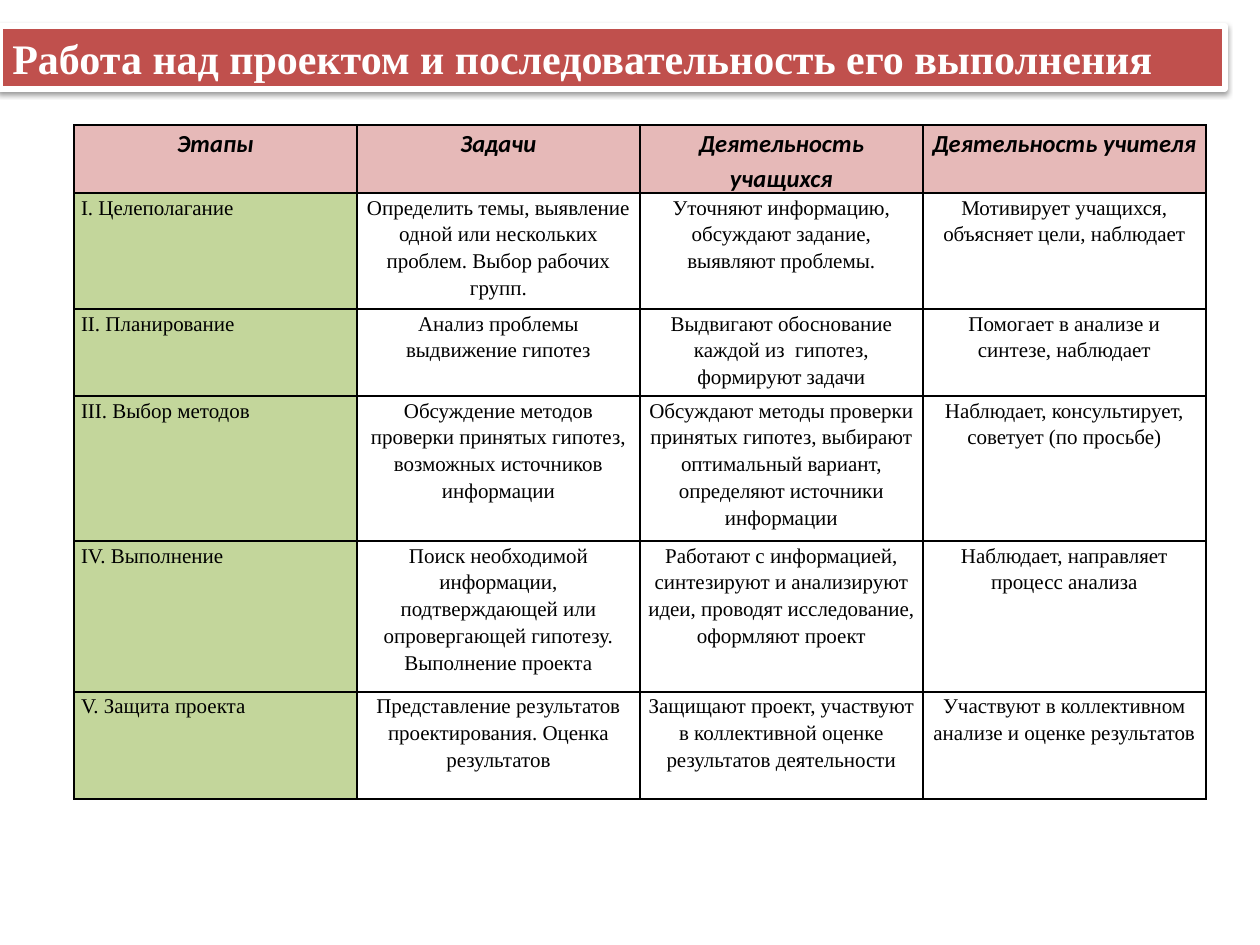
import pptx
import pptx.dml.color
import pptx.enum.shapes
import pptx.enum.text
import pptx.oxml
import pptx.oxml.ns
import pptx.util
from lxml import etree

RGBColor = pptx.dml.color.RGBColor
ALIGN = pptx.enum.text.PP_ALIGN

WHITE = RGBColor(0xFF, 0xFF, 0xFF)
BLACK = RGBColor(0x00, 0x00, 0x00)
RED = RGBColor(0xC0, 0x50, 0x4D)
PINK = RGBColor(0xE6, 0xB9, 0xB8)
GREEN = RGBColor(0xC3, 0xD6, 0x9B)
SERIF, SANS = "Times New Roman", "Calibri"

TITLE = "Работа над проектом и последовательность его выполнения"
ROWS = [
    ("Этапы", "Задачи", "Деятельность учащихся", "Деятельность учителя"),
    ("I. Целеполагание",
     "Определить темы, выявление одной или нескольких проблем. Выбор рабочих групп.",
     "Уточняют информацию, обсуждают задание, выявляют проблемы.",
     "Мотивирует учащихся, объясняет цели, наблюдает"),
    ("II. Планирование",
     "Анализ проблемы выдвижение гипотез",
     "Выдвигают обоснование каждой из  гипотез, формируют задачи",
     "Помогает в анализе и синтезе, наблюдает"),
    ("III. Выбор методов",
     "Обсуждение методов проверки принятых гипотез, возможных источников информации",
     "Обсуждают методы проверки принятых гипотез, выбирают оптимальный вариант, "
     "определяют источники информации",
     "Наблюдает, консультирует, советует (по просьбе)"),
    ("IV. Выполнение",
     "Поиск необходимой информации, подтверждающей или опровергающей гипотезу. "
     "Выполнение проекта",
     "Работают с информацией, синтезируют и анализируют идеи, проводят исследование, "
     "оформляют проект",
     "Наблюдает, направляет процесс анализа"),
    ("V. Защита проекта",
     "Представление результатов проектирования. Оценка результатов",
     "Защищают проект, участвуют в коллективной оценке результатов деятельности",
     "Участвуют в коллективном анализе и оценке результатов"),
]
ROW_HEIGHTS = [68, 115, 87, 145, 151, 107]
COLUMN_WIDTH = 283
TABLE_LEFT, TABLE_TOP = 74, 125
CELL_MARGIN = 7


def px(count):
    return pptx.util.Emu(round(count * 914400 / 126))


def style_text(para, font_name, size, color, bold=False, italic=False):
    for span in para.runs:
        font = span.font
        font.name, font.size = font_name, pptx.util.Pt(size)
        font.bold, font.italic = bold, italic
        font.color.rgb = color


def add_soft_shadow(shape):
    shape.shadow.inherit = False
    effects = shape._element.spPr.find(pptx.oxml.ns.qn("a:effectLst"))
    effects.append(pptx.oxml.parse_xml(
        f'<a:outerShdw {pptx.oxml.ns.nsdecls("a")} blurRad="39370" dist="20320" '
        'dir="5400000" rotWithShape="0"><a:srgbClr val="000000">'
        '<a:alpha val="38000"/></a:srgbClr></a:outerShdw>'))


def add_borders(cell):
    """Outline the cell; call before filling, as lines precede the fill in XML."""
    properties = cell._tc.get_or_add_tcPr()
    for side in ("lnL", "lnR", "lnT", "lnB"):
        line = etree.SubElement(properties, pptx.oxml.ns.qn(f"a:{side}"), w="12700")
        solid = etree.SubElement(line, pptx.oxml.ns.qn("a:solidFill"))
        etree.SubElement(solid, pptx.oxml.ns.qn("a:srgbClr"), val=str(BLACK))


def add_title(slide):
    box = slide.shapes.add_shape(
        pptx.enum.shapes.MSO_SHAPE.RECTANGLE, px(0), px(26), px(1225), px(63))
    box.fill.solid()
    box.fill.fore_color.rgb = RED
    box.line.color.rgb = WHITE
    box.line.width = pptx.util.Pt(3)
    add_soft_shadow(box)
    frame = box.text_frame
    frame.text = TITLE
    frame.word_wrap = True
    frame.auto_size = pptx.enum.text.MSO_AUTO_SIZE.SHAPE_TO_FIT_TEXT
    frame.vertical_anchor = pptx.enum.text.MSO_ANCHOR.TOP
    frame.paragraphs[0].alignment = ALIGN.LEFT
    style_text(frame.paragraphs[0], SERIF, 24, WHITE, bold=True)


def fill_cell(cell, text, is_header, is_stage):
    add_borders(cell)
    if is_header or is_stage:
        cell.fill.solid()
        cell.fill.fore_color.rgb = PINK if is_header else GREEN
    else:
        cell.fill.background()
    cell.margin_left = cell.margin_right = px(CELL_MARGIN)
    cell.margin_top = cell.margin_bottom = 0
    cell.text_frame.text = text
    para = cell.text_frame.paragraphs[0]
    para.line_spacing = 1.15
    para.alignment = ALIGN.LEFT if is_stage and not is_header else ALIGN.CENTER
    if is_header:
        style_text(para, SANS, 14, BLACK, bold=True, italic=True)
    else:
        style_text(para, SERIF, 12, BLACK)


def add_stage_table(slide):
    column_count = len(ROWS[0])
    table = slide.shapes.add_table(
        len(ROWS), column_count, px(TABLE_LEFT), px(TABLE_TOP),
        px(COLUMN_WIDTH * column_count), px(sum(ROW_HEIGHTS))).table
    table.first_row = table.horz_banding = False
    for column in table.columns:
        column.width = px(COLUMN_WIDTH)
    for row_index, (texts, height) in enumerate(zip(ROWS, ROW_HEIGHTS)):
        table.rows[row_index].height = px(height)
        for column_index, text in enumerate(texts):
            fill_cell(table.cell(row_index, column_index), text,
                      is_header=row_index == 0, is_stage=column_index == 0)


def main():
    deck = pptx.Presentation()
    deck.slide_width, deck.slide_height = px(1260), px(945)
    slide = deck.slides.add_slide(deck.slide_layouts[6])
    add_title(slide)
    add_stage_table(slide)
    deck.save("out.pptx")


if __name__ == "__main__":
    main()
